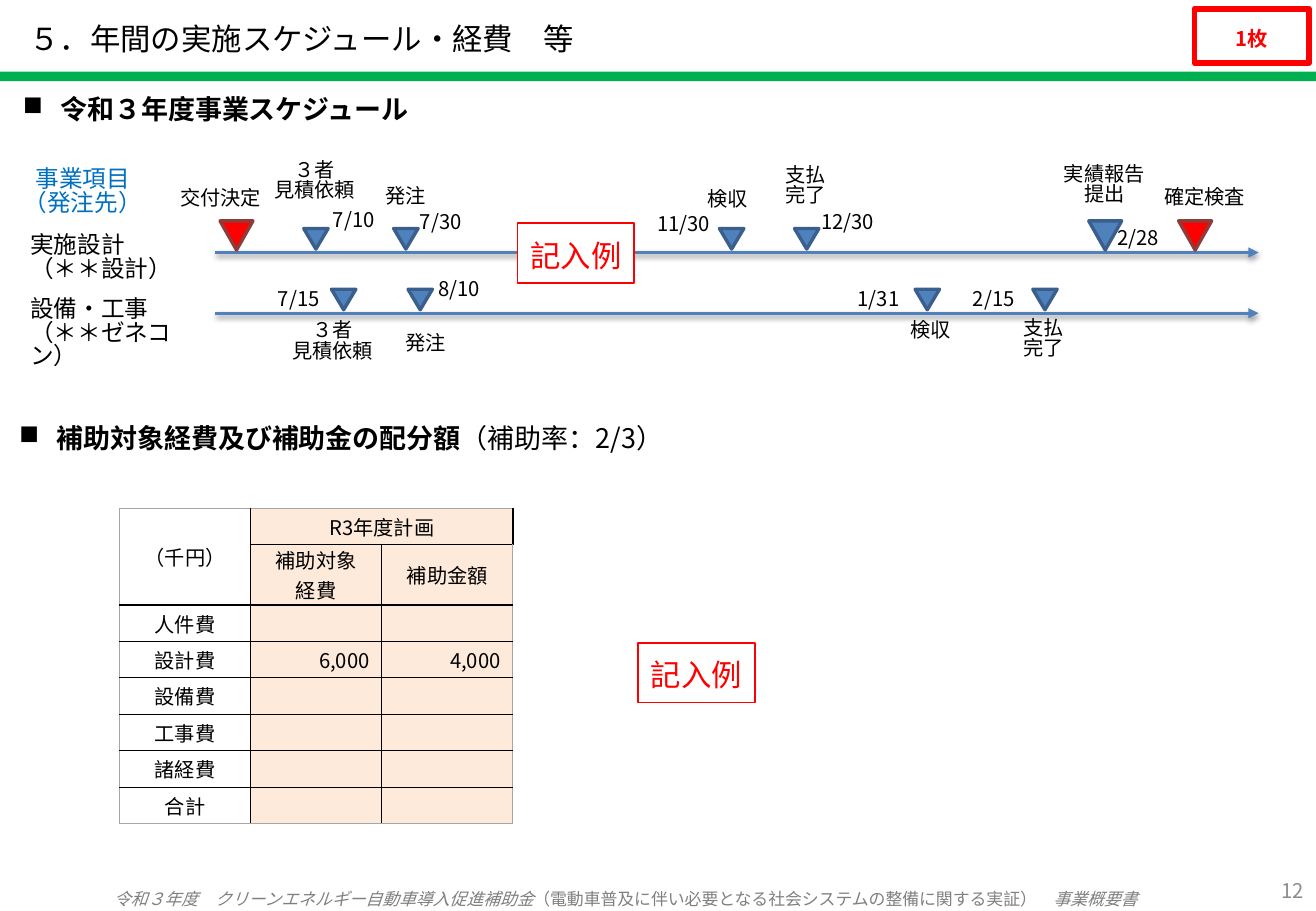
from dataclasses import dataclass

from lxml.etree import SubElement
from pptx import Presentation
from pptx.dml.color import RGBColor
from pptx.enum.shapes import MSO_CONNECTOR, MSO_SHAPE
from pptx.enum.text import MSO_ANCHOR, MSO_AUTO_SIZE, PP_ALIGN
from pptx.oxml.ns import qn
from pptx.util import Cm, Pt

LEFT, CENTER, RIGHT = PP_ALIGN.LEFT, PP_ALIGN.CENTER, PP_ALIGN.RIGHT
MIDDLE = MSO_ANCHOR.MIDDLE


@dataclass(frozen=True)
class Theme:
    font: str = "Noto Sans CJK JP"
    black: str = "000000"
    white: str = "FFFFFF"
    red: str = "FF0000"
    dark_red: str = "8E3B39"
    blue: str = "4F81BD"
    dark_blue: str = "3A5F8C"
    label_blue: str = "0070C0"
    green: str = "00B050"
    peach: str = "FDEADA"
    gray: str = "808080"
    number_gray: str = "8C8C8C"
    edge_gray: str = "A6A6A6"
    title: int = 18
    heading: int = 16
    item: int = 14
    label: int = 12
    footer: int = 10
    tight: float = 0.83


class SlideBuilder:
    def __init__(self, page, theme):
        self.page, self.theme = page, theme

    def set_text(self, frame, lines, size, color, align=LEFT, bold=None, spacing=None):
        """Each line is a string or a list of (text, bold, italic) spans."""
        for index, line in enumerate(lines):
            para = frame.paragraphs[0] if index == 0 else frame.add_paragraph()
            para.alignment = align
            if spacing:
                para.line_spacing = spacing
            para.font.size, para.font.bold = Pt(size), bold
            para.font.color.rgb = RGBColor.from_string(color)
            para.font.name = self.theme.font
            SubElement(para.font._element, qn("a:ea"), typeface=self.theme.font)
            spans = [(line, None, None)] if isinstance(line, str) else line
            for text, span_bold, span_italic in spans:
                span = para.add_run()
                span.text = text
                span.font.bold, span.font.italic = span_bold, span_italic

    def title(self, text, left, top, width, height):
        box = self.page.shapes.title
        box.left, box.top, box.width, box.height = map(Cm, (left, top, width, height))
        box.text_frame.auto_size = MSO_AUTO_SIZE.NONE
        box.text_frame.vertical_anchor = MIDDLE
        self.set_text(box.text_frame, [text], self.theme.title, self.theme.black)

    def text(self, lines, left, top, width, height, size, color=Theme.black,
             align=LEFT, anchor=MSO_ANCHOR.TOP, inset=0.13):
        box = self.page.shapes.add_textbox(Cm(left), Cm(top), Cm(width), Cm(height))
        frame = box.text_frame
        frame.word_wrap, frame.vertical_anchor = True, anchor
        frame.margin_left = frame.margin_right = Cm(0.25)
        frame.margin_top = frame.margin_bottom = Cm(inset)
        self.set_text(frame, lines, size, color, align, spacing=self.theme.tight)
        return box

    def heading(self, spans, left, top, width):
        box = self.text([spans], left, top, width, 0.94, self.theme.heading)
        props = box.text_frame.paragraphs[0]._p.get_or_add_pPr()
        props.set("marL", str(Cm(0.79)))
        props.set("indent", str(-Cm(0.79)))
        bullet = props.makeelement(qn("a:buChar"), {"char": "■"})
        props.find(qn("a:defRPr")).addprevious(bullet)

    def shape(self, kind, left, top, width, height, fill, line=None, weight=1):
        shape = self.page.shapes.add_shape(kind, Cm(left), Cm(top), Cm(width), Cm(height))
        shape.shadow.inherit = False
        shape.fill.solid()
        shape.fill.fore_color.rgb = RGBColor.from_string(fill)
        if line:
            shape.line.color.rgb = RGBColor.from_string(line)
            shape.line.width = Pt(weight)
        else:
            shape.line.fill.background()
        return shape

    def framed(self, text, left, top, width, height, weight, size, bold=None, spacing=None):
        theme = self.theme
        box = self.shape(MSO_SHAPE.RECTANGLE, left, top, width, height,
                         theme.white, theme.red, weight)
        frame = box.text_frame
        frame.word_wrap = True
        frame.margin_left = frame.margin_right = Cm(0.25)
        frame.margin_top, frame.margin_bottom = Cm(0.1), Cm(0)
        frame.vertical_anchor = MSO_ANCHOR.TOP if spacing else MIDDLE
        self.set_text(frame, [text], size, theme.red, CENTER, bold, spacing)

    def marker(self, left, top, width, height, fill, line):
        shape = self.shape(MSO_SHAPE.ISOSCELES_TRIANGLE, left, top, width, height, fill, line, 2)
        shape._element.spPr.xfrm.set("flipV", "1")

    def arrow(self, left, right, y):
        line = self.page.shapes.add_connector(
            MSO_CONNECTOR.STRAIGHT, Cm(left), Cm(y), Cm(right), Cm(y))
        line.line.color.rgb = RGBColor.from_string(self.theme.blue)
        line.line.width = Pt(2)
        props = line._element.spPr
        SubElement(props.find(qn("a:ln")), qn("a:tailEnd"), type="triangle")
        shadow = SubElement(SubElement(props, qn("a:effectLst")), qn("a:outerShdw"),
                            blurRad="40000", dist="20000", dir="5400000", rotWithShape="0")
        color = SubElement(shadow, qn("a:srgbClr"), val=self.theme.black)
        SubElement(color, qn("a:alpha"), val="38000")

    def border(self, cell, sides):
        props = cell._tc.get_or_add_tcPr()
        for index, (side, inner) in enumerate(sides.items()):
            line = props.makeelement(qn(f"a:{side}"), {"w": str(Pt(1 if inner else 0.5))})
            color = self.theme.black if inner else self.theme.edge_gray
            SubElement(SubElement(line, qn("a:solidFill")), qn("a:srgbClr"), val=color)
            props.insert(index, line)

    def table(self, rows, merges, left, top, column, heights):
        theme, count = self.theme, len(rows[0])
        table = self.page.shapes.add_table(
            len(rows), count, Cm(left), Cm(top), Cm(column * count), Cm(sum(heights))).table
        for col in table.columns:
            col.width = Cm(column)
        for r, values in enumerate(rows):
            table.rows[r].height = Cm(heights[r])
            for c, value in enumerate(values):
                cell = table.cell(r, c)
                cell.margin_top = cell.margin_bottom = Cm(0)
                cell.vertical_anchor = MIDDLE
                cell.fill.solid()
                cell.fill.fore_color.rgb = RGBColor.from_string(theme.peach if c else theme.white)
                align = RIGHT if value[:1].isdigit() else CENTER
                self.set_text(cell.text_frame, value.split("\n"), theme.label, theme.black, align)
                self.border(cell, {"lnL": c > 0, "lnR": c < count - 1,
                                   "lnT": r > 0, "lnB": r < len(rows) - 1})
        for start, end in merges:
            table.cell(*start).merge(table.cell(*end))


def main():
    theme = Theme()
    deck = Presentation()
    deck.slide_width, deck.slide_height = Cm(27.51), Cm(19.05)
    build = SlideBuilder(deck.slides.add_slide(deck.slide_layouts[5]), theme)

    # Title band and footer
    build.title("５．年間の実施スケジュール・経費　等", 0.36, 0.1, 19.81, 1.4)
    build.shape(MSO_SHAPE.RECTANGLE, 0, 1.5, 27.51, 0.2, theme.green)
    build.framed("1枚", 24.97, 0.18, 2.39, 1.14, 3.5, theme.label, bold=True)
    footer = [("令和３年度　クリーンエネルギー自動車導入促進補助金", None, True),
              ("（電動車普及に伴い必要となる社会システムの整備に関する実証）", None, False),
              ("　事業概要書", None, True)]
    build.text([footer], 0, 18.59, 26.16, 0.46, theme.footer, theme.gray, CENTER, MIDDLE, 0)
    build.text(["12"], 24.66, 18.31, 2.85, 0.71, theme.label, theme.number_gray, RIGHT, MIDDLE)

    # Section headings
    build.heading([("令和３年度事業スケジュール", True, None)], 0.23, 1.93, 14.33)
    build.heading([("補助対象経費及び補助金の配分額", True, None),
                   ("（補助率：2/3）", False, None)], 0.15, 8.81, 25.2)

    # Schedule items
    for lines, left, top, width, color, align in [
            (["事業項目", "（発注先）"], 0.23, 3.4, 3.0, theme.label_blue, CENTER),
            (["実施設計", "（＊＊設計）"], 0.38, 4.78, 3.5, theme.black, LEFT),
            (["設備・工事", "（＊＊ゼネコン）"], 0.38, 6.12, 4.04, theme.black, LEFT)]:
        build.text(lines, left, top, width, 1.45, theme.item, color, align)

    # Timelines and milestones
    for y in (5.28, 6.55):
        build.arrow(4.5, 26.31, y)
    for top, lefts in [(4.78, (6.35, 8.23, 15.04, 16.61)), (6.05, (6.93, 8.53, 19.13, 21.59))]:
        for left in lefts:
            build.marker(left, top, 0.51, 0.43, theme.blue, theme.dark_blue)
    for left, fill, line in [(4.6, theme.red, theme.dark_red),
                             (22.76, theme.blue, theme.dark_blue),
                             (24.64, theme.red, theme.dark_red)]:
        build.marker(left, 4.62, 0.69, 0.61, fill, line)

    # Milestone names
    for text, left, top in [
            ("交付決定", 3.48, 3.84), ("３者\n見積依頼", 5.44, 3.25), ("発注", 7.77, 3.78),
            ("検収", 14.5, 3.86), ("支払\n完了", 16.13, 3.35), ("実績報告\n提出", 21.95, 3.33),
            ("確定検査", 24.05, 3.81), ("３者\n見積依頼", 5.82, 6.6), ("発注", 8.2, 6.86),
            ("検収", 18.75, 6.6), ("支払\n完了", 21.11, 6.55)]:
        lines = text.split("\n")
        width = 0.55 + 0.43 * max(map(len, lines))
        build.text(lines, left, top, width, 0.25 + 0.51 * len(lines), theme.label, align=CENTER)

    # Milestone dates
    for date, left, top in [
            ("7/10", 6.71, 4.29), ("7/30", 8.53, 4.34), ("11/30", 13.49, 4.37),
            ("12/30", 16.92, 4.34), ("2/28", 23.11, 4.67), ("7/15", 5.56, 5.94),
            ("8/10", 8.92, 5.74), ("1/31", 17.68, 5.94), ("2/15", 20.09, 5.94)]:
        build.text([date], left, top, 1.8, 0.76, theme.label)

    # Budget table
    rows = [["（千円）", "R3年度計画", ""], ["", "補助対象\n経費", "補助金額"],
            ["人件費", "", ""], ["設計費", "6,000", "4,000"]]
    rows += [[name, "", ""] for name in ("設備費", "工事費", "諸経費", "合計")]
    build.table(rows, [((0, 0), (1, 0)), ((0, 1), (0, 2))], 2.5, 10.63, 2.74,
                [0.76, 1.26] + [0.76] * 6)

    # Sample entry stamps
    for left, top in [(10.82, 4.67), (13.34, 13.44)]:
        build.framed("記入例", left, top, 2.44, 1.25, 1, theme.title, spacing=1.25)

    deck.save("out.pptx")


if __name__ == "__main__":
    main()
